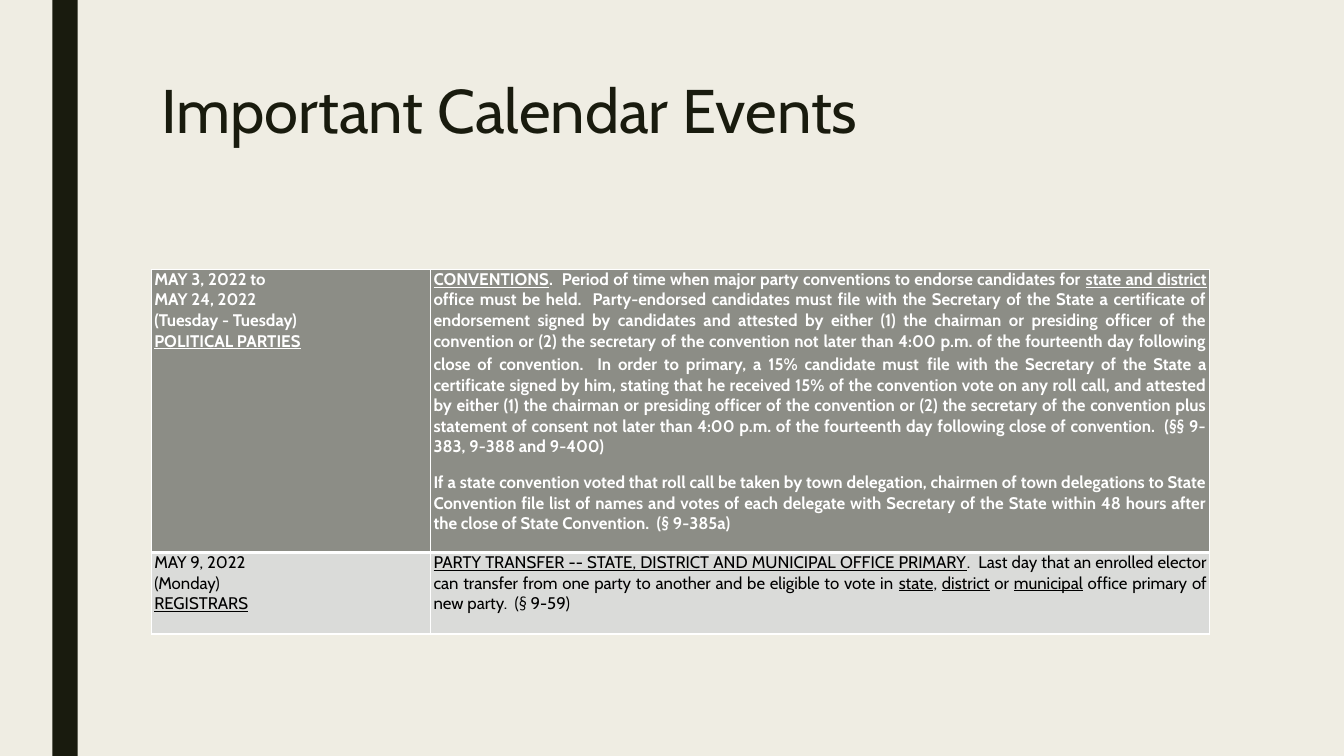
from lxml.etree import SubElement
from pptx import Presentation
from pptx.dml.color import RGBColor
from pptx.enum.shapes import MSO_SHAPE as Shape
from pptx.enum.text import MSO_ANCHOR as Anchor, PP_ALIGN as Align
from pptx.oxml.ns import qn
from pptx.util import Inches, Pt

FONT, DARK, WHITE = "Cabin", "191B0E", "FFFFFF"
HEAD = {"fill": "8C8D86", "ink": WHITE, "bold": True}
BODY = {"fill": "DADBD9", "ink": "000000", "bold": False}

EVENTS = [
    (HEAD, 2.81,
     [[("MAY 3, 2022 to",)], [("MAY 24, 2022",)], [("(Tuesday - Tuesday)",)],
      [("POLITICAL PARTIES", True)]],
     [[("CONVENTIONS", True),
       (".  Period of time when major party conventions to endorse candidates for ",),
       ("state and district", True),
       (" office must be held.  Party-endorsed candidates must file with the Secretary "
        "of the State a certificate of endorsement signed by candidates and attested by "
        "either (1) the chairman or presiding officer of the convention or (2) the "
        "secretary of the convention not later than 4:00 p.m. of the fourteenth day "
        "following close of convention.  In order to primary, a 15% candidate must",),
       (" ", False, 14),
       ("file with the Secretary of the State a certificate signed by him, stating that "
        "he received 15% of the convention vote on any roll call, and attested by either "
        "(1) the chairman or presiding officer of the convention or (2) the secretary of "
        "the convention plus statement of consent not later than 4:00 p.m. of the "
        "fourteenth day following close of convention.  (§§ 9-383, 9-388 and 9-400)",)],
      [("If a state convention voted that roll call be taken by town delegation, chairmen "
        "of town delegations to State Convention file list of names and votes of each "
        "delegate with Secretary of the State within 48 hours after the close of State "
        "Convention.  (§ 9-385a)",)]]),
    (BODY, 0.81,
     [[("MAY 9, 2022",)], [("(Monday)",)], [("REGISTRARS", True)]],
     [[("PARTY TRANSFER -- STATE, DISTRICT AND MUNICIPAL OFFICE PRIMARY", True),
       (".  Last day that an enrolled elector can transfer from one party to another and "
        "be eligible to vote in ",),
       ("state", True), (", ",), ("district", True), (" or ",), ("municipal", True),
       (" office primary of new party.  (§ 9-59)",)]]),
]


def color(code):
    """Turn a hex string into a colour."""
    return RGBColor.from_string(code)


def paint(fill, code):
    """Make a fill solid."""
    fill.solid()
    fill.fore_color.rgb = color(code)


def add_run(para, text, size, ink, bold=False, under=False):
    """Add one styled run to a paragraph."""
    run = para.add_run()
    run.text = text
    font = run.font
    font.name, font.size, font.bold, font.underline = FONT, Pt(size), bold, under
    font.color.rgb = color(ink)


def add_edge(cell, side, width):
    """Draw a white border on one side of a cell."""
    line = SubElement(cell._tc.get_or_add_tcPr(), qn(f"a:ln{side}"), w=str(Pt(width)))
    fill = SubElement(line, qn("a:solidFill"))
    SubElement(fill, qn("a:srgbClr"), val=WHITE)


def fill_cell(cell, look, paras, edges, gap):
    """Style a cell and write its paragraphs."""
    for side, width in edges.items():
        add_edge(cell, side, width)
    paint(cell.fill, look["fill"])
    cell.margin_left = cell.margin_right = Inches(0.03)
    cell.margin_top = cell.margin_bottom = 0
    frame = cell.text_frame
    for i, runs in enumerate(paras):
        para = frame.add_paragraph() if i else frame.paragraphs[0]
        para.alignment = Align.JUSTIFY
        para.space_after = Pt(gap)
        for text, under, size in ((*run, False, 12)[:3] if len(run) != 2
                                  else (*run, 12) for run in runs):
            add_run(para, text, size, look["ink"], look["bold"], under)


def add_bar(slide, x, y, w, h):
    """Draw the dark bar at the left."""
    bar = slide.shapes.add_shape(Shape.RECTANGLE, Inches(x), Inches(y), Inches(w), Inches(h))
    bar.shadow.inherit = False
    paint(bar.fill, DARK)
    bar.line.fill.background()


def add_title(slide, x, y, w, h):
    """Place and write the title."""
    title = slide.shapes.title
    title.left, title.top, title.width, title.height = map(Inches, (x, y, w, h))
    frame = title.text_frame
    frame.word_wrap = True
    frame.vertical_anchor = Anchor.TOP
    para = frame.paragraphs[0]
    para.alignment = Align.LEFT
    para.line_spacing = 0.89
    add_run(para, "Important Calendar Events", 44, DARK)


def add_events(slide, x, y, w, date_w):
    """Build the table of dates and events."""
    high = sum(event[1] for event in EVENTS)
    table = slide.shapes.add_table(
        len(EVENTS), 2, Inches(x), Inches(y), Inches(w), Inches(high)).table
    table.columns[0].width = Inches(date_w)
    table.columns[1].width = Inches(w - date_w)
    for r, (look, tall, dates, notes) in enumerate(EVENTS):
        table.rows[r].height = Inches(tall)
        edges = {"L": 1, "R": 1, "T": 3 if r else 1, "B": 1 if r else 3}
        fill_cell(table.cell(r, 0), look, dates, edges, 0)
        fill_cell(table.cell(r, 1), look, notes, edges, 11)


def main():
    """Build and save the slide."""
    deck = Presentation()
    deck.slide_width, deck.slide_height = Inches(13.33), Inches(7.5)
    slide = deck.slides.add_slide(deck.slide_layouts[5])
    paint(slide.background.fill, "EFEDE3")
    add_bar(slide, 0.52, 0, 0.25, 7.5)
    add_title(slide, 1.5, 0.75, 10.5, 1.62)
    add_events(slide, 1.5, 2.67, 10.5, 2.77)
    deck.save("out.pptx")


if __name__ == "__main__":
    main()
